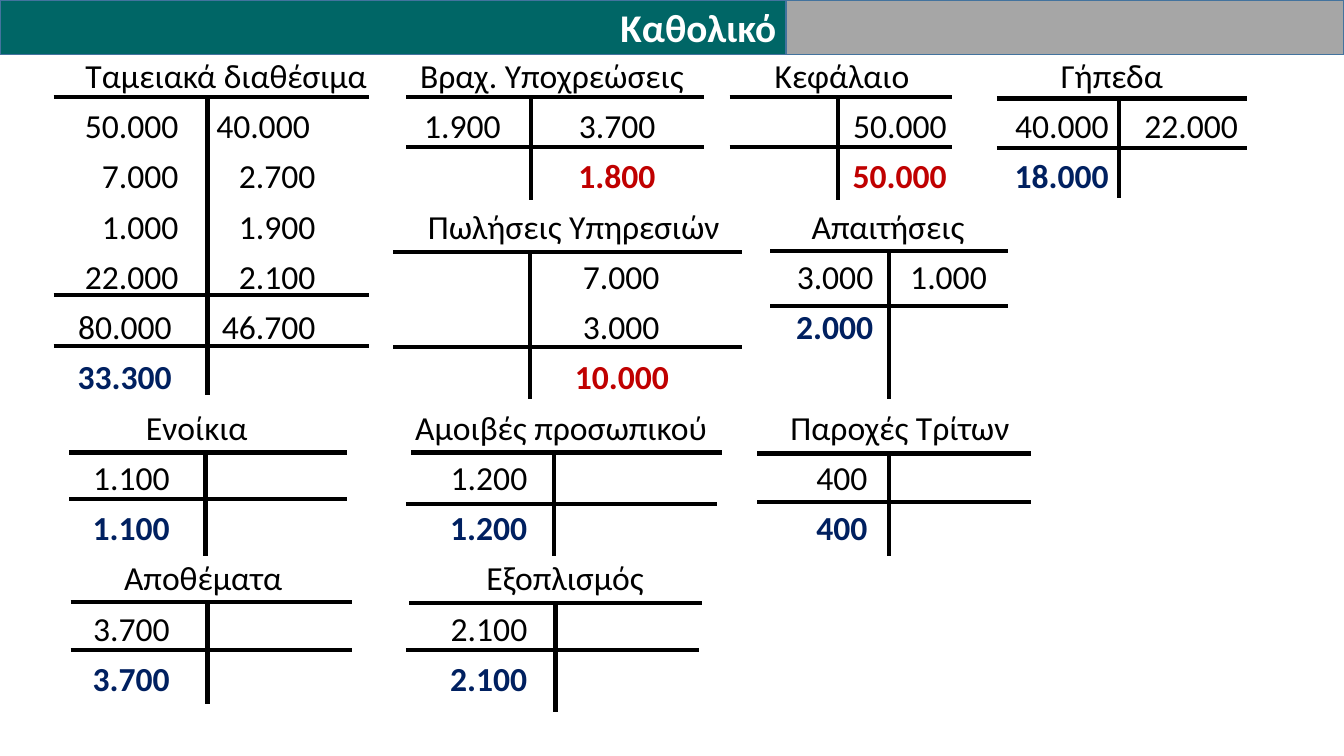
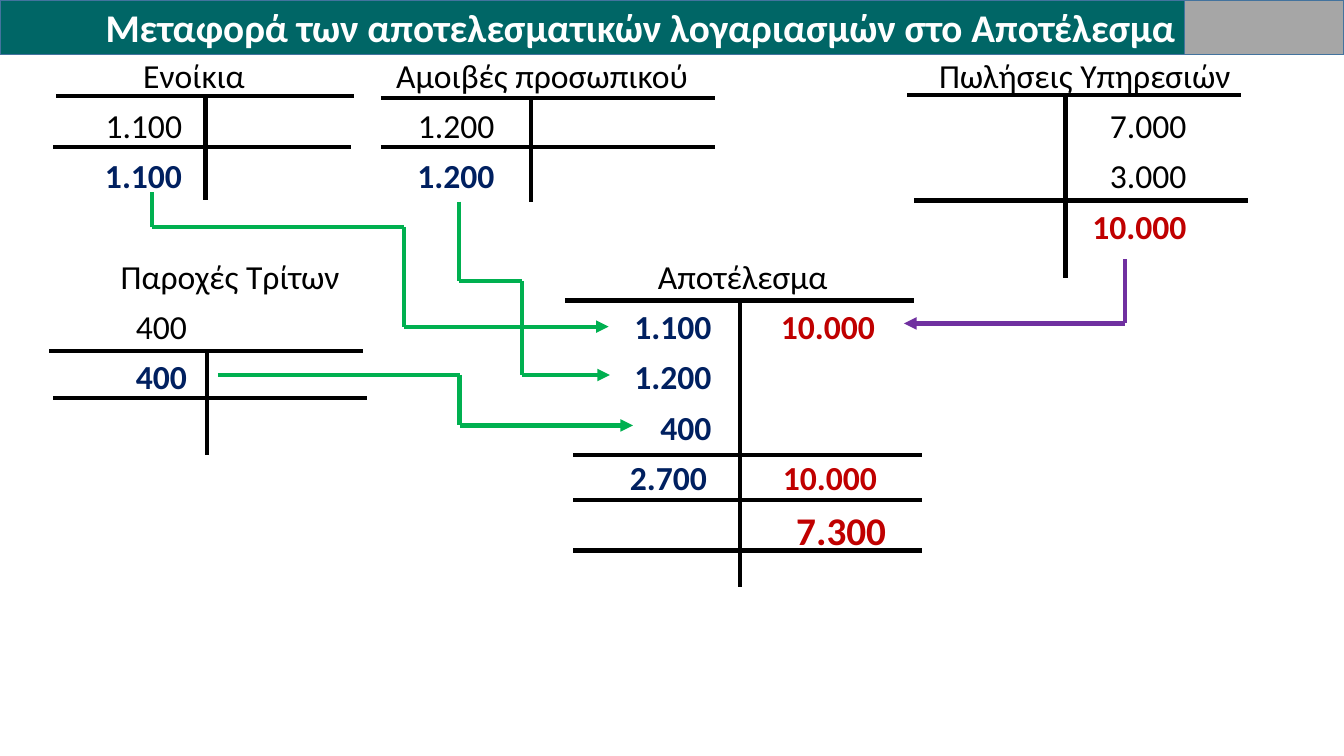
from itertools import pairwise

from lxml import etree
from pptx import Presentation
from pptx import util as u
from pptx.dml.color import RGBColor
from pptx.enum import shapes, text
from pptx.oxml.ns import qn

TONES = {
    "ink": "000000", "white": "FFFFFF", "teal": "006666", "grey": "A6A6A6",
    "edge": "43739E", "debit": "002060", "credit": "C00000",
    "green": "00B050", "violet": "7030A0",
}
WIDE, HIGH, BAND = 33.87, 19.05, 1.37
PITCH = u.Pt(35.9)  # height of one ledger row


def tone(name):
    return RGBColor.from_string(TONES[name])


def write(para, words, size=24, color="ink", bold=False):
    run = para.add_run()
    run.text = words
    font = run.font
    font.name, font.size, font.bold = "Calibri", u.Pt(size), bold
    font.color.rgb = tone(color)


class Deck:
    """Holds the shared style and the current slide."""

    def __init__(self):
        self.show = Presentation()
        self.show.slide_width, self.show.slide_height = u.Cm(WIDE), u.Cm(HIGH)

    def page(self, title, split):
        """Start a slide with a title band that ends at split."""
        self.slide = self.show.slides.add_slide(self.show.slide_layouts[5])
        head = self.slide.shapes.title
        head.left, head.top, head.width, head.height = map(u.Cm, (0, 0, split, BAND))
        self.paint(head, "teal")
        para = self.frame(head, text.MSO_ANCHOR.MIDDLE, 0.25).paragraphs[0]
        para.alignment = text.PP_ALIGN.RIGHT
        write(para, title, size=28, color="white", bold=True)
        rest = self.slide.shapes.add_shape(
            shapes.MSO_SHAPE.RECTANGLE, u.Cm(split), 0, u.Cm(WIDE - split), u.Cm(BAND))
        rest.shadow.inherit = False
        self.paint(rest, "grey")

    def paint(self, item, fill):
        item.fill.solid()
        item.fill.fore_color.rgb = tone(fill)
        item.line.color.rgb = tone("edge")
        item.line.width = u.Pt(1)

    def frame(self, item, anchor, inset):
        frame = item.text_frame
        frame.auto_size = text.MSO_AUTO_SIZE.NONE
        frame.word_wrap = True
        frame.vertical_anchor = anchor
        frame.margin_left = frame.margin_right = u.Cm(inset)
        return frame

    def block(self, left, width, row, count):
        """Text box that covers count ledger rows from row on."""
        box = self.slide.shapes.add_textbox(
            u.Cm(left), u.Cm(BAND) + row * PITCH, u.Cm(width), count * PITCH)
        return self.frame(box, text.MSO_ANCHOR.TOP, 0)

    def name(self, middle, row, words):
        """Account name, centred on middle."""
        para = self.block(middle - 4.4, 8.8, row, 1).paragraphs[0]
        para.alignment, para.line_spacing = text.PP_ALIGN.CENTER, 0.9
        write(para, words)

    def sums(self, right, row, plain, total="", color="ink", size=24):
        """Column of amounts ending at right; those in total are bold."""
        cells = [(amount, "ink") for amount in plain.split()]
        cells += [(amount, color) for amount in total.split()]
        frame = self.block(right - 3, 3, row, len(cells))
        for i, (amount, shade) in enumerate(cells):
            para = frame.add_paragraph() if i else frame.paragraphs[0]
            para.alignment, para.line_spacing = text.PP_ALIGN.RIGHT, 0.9
            para.space_before = u.Pt(10 if i else 0)
            write(para, amount, size, shade, bold=shade != "ink")

    def line(self, start, end, color="ink", arrow=False):
        link = self.slide.shapes.add_connector(
            shapes.MSO_CONNECTOR.STRAIGHT, *map(u.Cm, start + end))
        link.line.color.rgb = tone(color)
        link.line.width = u.Pt(3)
        etree.SubElement(link._element.spPr, qn("a:effectLst"))
        if arrow:
            tail = etree.SubElement(link.line._get_or_add_ln(), qn("a:tailEnd"))
            tail.set("type", "triangle")

    def cross(self, left, right, top, stem, foot, *rules, shift=0):
        """T of an account: head line, stem, and rules moved by shift."""
        self.line((left, top), (right, top))
        self.line((stem, top), (stem, foot))
        for y in rules:
            self.line((left + shift, y), (right + shift, y))

    def route(self, color, *points):
        """Bent path with an arrowhead on its last leg."""
        for start, end in pairwise(points):
            self.line(start, end, color, arrow=end == points[-1])


def main():
    deck = Deck()

    # General ledger: first row of accounts
    deck.page("Καθολικό", 19.81)
    deck.name(5.7, 0, "Ταμειακά διαθέσιμα")
    deck.sums(4.5, 1, "50.000 7.000 1.000 22.000")
    deck.sums(4.33, 5, "80.000", "33.300", "debit")
    deck.sums(7.81, 1, "40.000")
    deck.sums(7.95, 2, "2.700 1.900 2.100 46.700")
    deck.cross(1.35, 9.3, 2.45, 5.23, 9.96, 7.43, 8.71)
    deck.name(13.91, 0, "Βραχ. Υποχρεώσεις")
    deck.sums(12.62, 1, "1.900")
    deck.sums(16.52, 1, "3.700", "1.800", "credit")
    deck.cross(10.24, 17.73, 2.45, 13.39, 5.03, 3.71)
    deck.name(21.22, 0, "Κεφάλαιο")
    deck.sums(23.86, 1, "50.000", "50.000", "credit")
    deck.cross(18.39, 24, 2.45, 21.11, 5.03, 3.71)
    deck.name(28.02, 0, "Γήπεδα")
    deck.sums(27.94, 1, "40.000", "18.000", "debit")
    deck.sums(31.2, 1, "22.000")
    deck.cross(25.12, 31.42, 2.48, 28.19, 5, 3.73)

    # Second row of accounts
    deck.name(14.46, 3, "Πωλήσεις Υπηρεσιών")
    deck.sums(16.62, 4, "7.000 3.000")
    deck.sums(16.86, 6, "", "10.000", "credit")
    deck.cross(9.91, 18.69, 6.34, 13.36, 10.06, 8.74)
    deck.name(22.38, 3, "Απαιτήσεις")
    deck.sums(22.01, 4, "3.000", "2.000", "debit")
    deck.sums(24.87, 4, "1.000")
    deck.cross(19.41, 25.4, 6.32, 22.4, 10.06, 7.72)

    # Third row of accounts
    deck.name(4.96, 7, "Ενοίκια")
    deck.sums(4.28, 8, "1.100", "1.100", "debit")
    deck.cross(1.75, 8.74, 11.4, 5.18, 14, 12.57)
    deck.name(14.14, 7, "Αμοιβές προσωπικού")
    deck.sums(13.29, 8, "1.200", "1.200", "debit")
    deck.cross(10.36, 18.19, 11.4, 13.97, 14, 12.7, shift=-0.13)
    deck.name(22.68, 7, "Παροχές Τρίτων")
    deck.sums(21.86, 8, "400", "400", "debit")
    deck.cross(19.08, 25.98, 11.43, 22.4, 14.02, 12.65)

    # Fourth row of accounts
    deck.name(5.12, 10, "Αποθέματα")
    deck.sums(4.28, 11, "3.700", "3.700", "debit")
    deck.cross(1.78, 8.86, 15.16, 5.23, 17.75, 16.38)
    deck.name(14.24, 10, "Εξοπλισμός")
    deck.sums(13.29, 11, "2.100", "2.100", "debit")
    deck.cross(10.31, 17.7, 15.19, 14, 17.93, 16.38, shift=-0.08)

    # Income and expense accounts
    deck.page("Μεταφορά των αποτελεσματικών λογαριασμών στο Αποτέλεσμα", 29.85)
    deck.name(4.89, 0, "Ενοίκια")
    deck.sums(4.59, 1, "1.100", "1.100", "debit")
    deck.cross(1.42, 8.92, 2.41, 5.18, 5.05, 3.71, shift=-0.08)
    deck.name(13.66, 0, "Αμοιβές προσωπικού")
    deck.sums(12.46, 1, "1.200", "1.200", "debit")
    deck.cross(9.6, 18.01, 2.46, 13.39, 5.08, 3.71)
    deck.name(27.34, 0, "Πωλήσεις Υπηρεσιών")
    deck.sums(29.9, 1, "7.000 3.000", "10.000", "credit")
    deck.cross(22.86, 31.27, 2.39, 26.85, 7.01, 5.05, shift=0.18)
    deck.name(5.8, 4, "Παροχές Τρίτων")
    deck.sums(4.71, 5, "400", "400", "debit")
    deck.cross(1.24, 9.14, 8.84, 5.21, 11.46, 10.02, shift=0.1)

    # Result account
    deck.name(18.72, 4, "Αποτέλεσμα")
    deck.sums(17.93, 5, "", "1.100 1.200 400", "debit")
    deck.sums(17.82, 8, "", "2.700", "debit")
    deck.sums(22.05, 5, "", "10.000", "credit")
    deck.sums(22.1, 8, "", "10.000", "credit")
    deck.sums(22.33, 9, "", "7.300", "credit", size=28)
    deck.cross(14.25, 23.04, 7.57, 18.64, 14.78, 11.46, 12.6, 13.87, shift=0.2)

    # Flows into the result account
    deck.route("green", (3.84, 4.85), (3.84, 5.72), (10.19, 5.72), (10.19, 8.23), (15.34, 8.23))
    deck.route("green", (11.56, 5.08), (11.56, 7.09), (13.15, 7.09), (13.15, 9.45), (15.37, 9.45))
    deck.route("green", (5.49, 9.45), (11.58, 9.45), (11.58, 10.72), (15.95, 10.72))
    deck.route("violet", (28.35, 6.53), (28.35, 8.15), (22.78, 8.15))

    deck.show.save("out.pptx")


if __name__ == "__main__":
    main()
